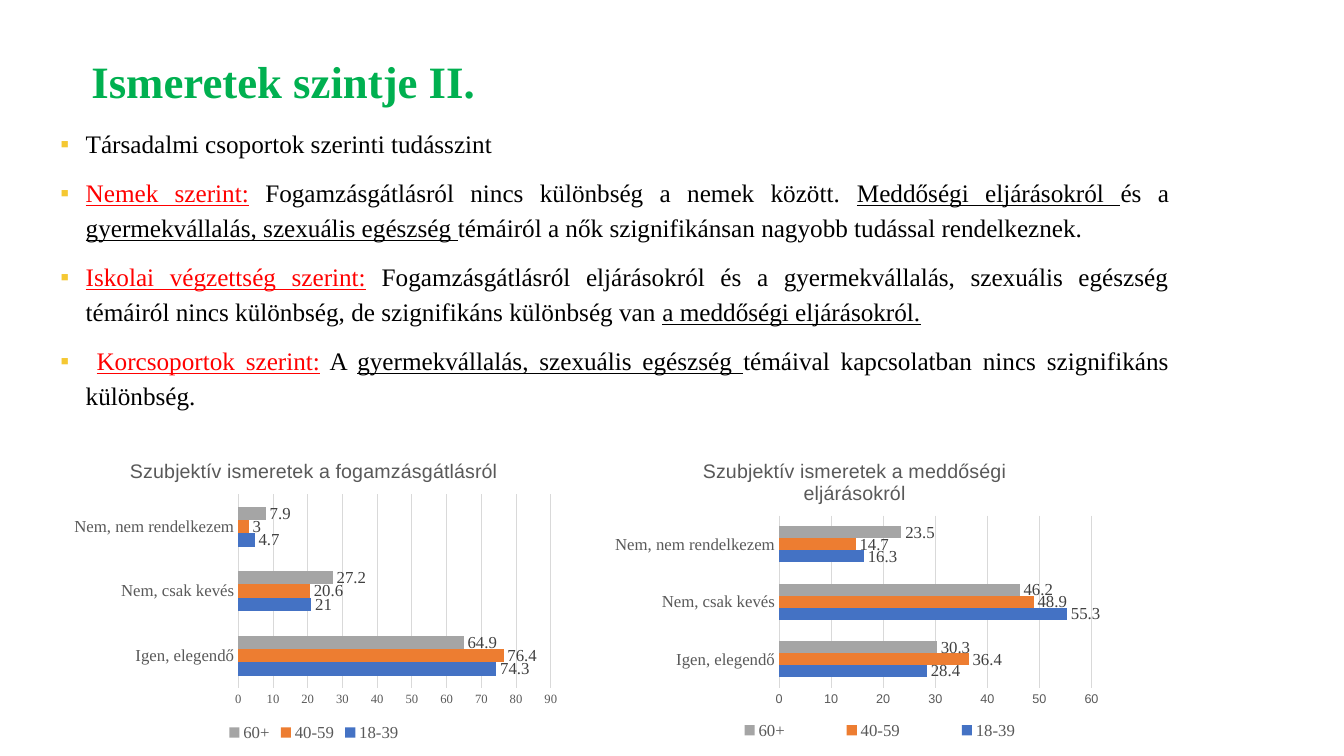
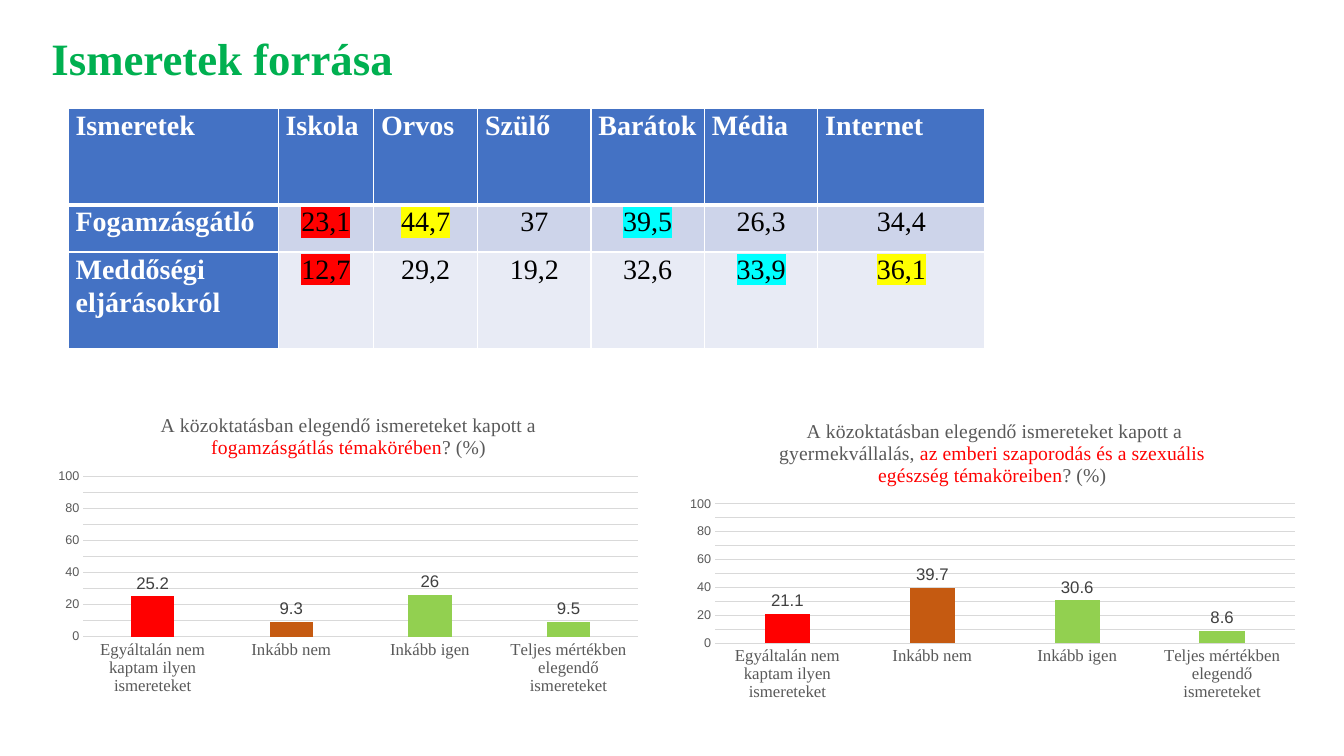
"""Build two slides on knowledge levels and knowledge sources."""
from copy import deepcopy
from dataclasses import dataclass
from typing import NamedTuple, Optional

from pptx import Presentation
from pptx import util as u
from pptx.chart import data as chart_data
from pptx.dml.color import RGBColor
from pptx.enum import chart as chart_enum, text
from pptx.oxml import ns, xmlchemy

EMU_PER_PX = 9525


@dataclass(frozen=True)
class Theme:
    serif: str = "Times New Roman"
    sans: str = "Arial"
    title: str = "00B050"
    body: str = "000000"
    accent: str = "FF0000"
    bullet: str = "F5C832"
    white: str = "FFFFFF"
    header: str = "4472C4"
    bands: tuple = ("CDD4EA", "E8EBF5")
    grid: str = "D9D9D9"
    chart_text: str = "595959"
    label: str = "404040"
    ages: tuple = ("4472C4", "ED7D31", "A5A5A5")
    answers: tuple = ("FF0000", "C55A11", "92D050", "92D050")
    title_size: int = 32
    table_size: int = 20
    body_size: int = 18
    chart_title_size: int = 14
    chart_size: int = 12
    axis_size: int = 9


THEME = Theme()


class Run(NamedTuple):
    text: str
    color: Optional[str] = None
    underline: bool = False
    highlight: Optional[str] = None


class ChartStyle(NamedTuple):
    kind: int
    gap: int
    overlap: int
    maximum: int
    major: int
    axis_font: str
    label_font: str
    title_font: str


def px(length):
    return u.Emu(length * EMU_PER_PX)


def rgb(color):
    return RGBColor.from_string(color)


def add_xml(parent, tag, index=None, **attributes):
    element = xmlchemy.OxmlElement(tag)
    for name, value in attributes.items():
        element.set(name, str(value))
    parent.insert(len(parent) if index is None else index, element)
    return element


def set_font(font, name, size, color, bold=False):
    font.name, font.size, font.bold = name, u.Pt(size), bold
    font.color.rgb = rgb(color)


def add_runs(paragraph, runs):
    for item in runs:
        run = paragraph.add_run()
        run.text = item.text
        if item.color:
            run.font.color.rgb = rgb(item.color)
        if item.underline:
            run.font.underline = True
        if item.highlight:
            highlight = add_xml(run.font._element, "a:highlight")
            add_xml(highlight, "a:srgbClr", val=item.highlight)


def place(shape, box):
    shape.left, shape.top, shape.width, shape.height = map(px, box)
    frame = shape.text_frame
    frame.word_wrap = True
    frame.auto_size = text.MSO_AUTO_SIZE.NONE
    frame.vertical_anchor = text.MSO_ANCHOR.TOP
    return frame


def set_title(slide, wording, left, top):
    frame = place(slide.shapes.title, (left, top, 1096, 106))
    frame.margin_left = frame.margin_top = frame.margin_right = frame.margin_bottom = 0
    paragraph = frame.paragraphs[0]
    paragraph.alignment = text.PP_ALIGN.LEFT
    paragraph.line_spacing = 1.12
    set_font(paragraph.font, THEME.serif, THEME.title_size, THEME.title, True)
    add_runs(paragraph, [Run(wording)])


def set_bullets(slide, items, box):
    frame = place(slide.placeholders[1], box)
    for index, runs in enumerate(items):
        paragraph = frame.add_paragraph() if index else frame.paragraphs[0]
        paragraph.alignment = text.PP_ALIGN.JUSTIFY
        paragraph.line_spacing = 1.16
        paragraph.space_before = u.Pt(10 if index else 0)
        properties = paragraph._p.get_or_add_pPr()
        properties.set("marL", str(px(24)))
        properties.set("indent", str(px(-24)))
        add_xml(add_xml(properties, "a:buClr"), "a:srgbClr", val=THEME.bullet)
        add_xml(properties, "a:buFont", typeface=THEME.sans)
        add_xml(properties, "a:buChar", char="▪")
        set_font(paragraph.font, THEME.serif, THEME.body_size, THEME.body)
        add_runs(paragraph, runs)


def set_borders(cell, widths):
    properties = cell._tc.get_or_add_tcPr()
    for side, width in widths.items():
        line = add_xml(properties, f"a:ln{side}", w=u.Pt(width))
        add_xml(add_xml(line, "a:solidFill"), "a:srgbClr", val=THEME.white)


def fill_cell(cell, run, row, column):
    heading = row == 0 or column == 0
    set_borders(cell, {"L": 1, "R": 1, "T": 3 if row == 1 else 1, "B": 1 if row else 3})
    cell.fill.solid()
    cell.fill.fore_color.rgb = rgb(THEME.header if heading else THEME.bands[row - 1])
    cell.margin_left = cell.margin_right = px(7)
    cell.margin_top = cell.margin_bottom = 0
    paragraph = cell.text_frame.paragraphs[0]
    paragraph.alignment = text.PP_ALIGN.LEFT if heading else text.PP_ALIGN.CENTER
    paragraph.line_spacing = 1.07
    paragraph.space_after = u.Pt(8)
    color = THEME.white if heading else THEME.body
    set_font(paragraph.font, THEME.serif, THEME.table_size, color, heading)
    add_runs(paragraph, [run])


def add_table(slide, rows, left, top, widths, heights):
    table = slide.shapes.add_table(
        len(heights), len(widths), px(left), px(top), px(sum(widths)), px(sum(heights))
    ).table
    for column, width in zip(table.columns, widths):
        column.width = px(width)
    for row, height in zip(table.rows, heights):
        row.height = px(height)
    for row, runs in enumerate(rows):
        for column, run in enumerate(runs):
            fill_cell(table.cell(row, column), run, row, column)


def set_layout(element, index, fractions, inner=False):
    for old in element.findall(ns.qn("c:layout")):
        element.remove(old)
    manual = add_xml(add_xml(element, "c:layout", index), "c:manualLayout")
    if inner:
        add_xml(manual, "c:layoutTarget", val="inner")
    for axis in "xy":
        add_xml(manual, f"c:{axis}Mode", val="edge")
    for name, fraction in zip("xywh", fractions):
        add_xml(manual, f"c:{name}", val=fraction)


def draw_line(line):
    line.color.rgb = rgb(THEME.grid)
    line.width = u.Pt(0.75)


def add_minor_gridlines(axis, unit):
    axis.minor_unit = unit
    axis.has_minor_gridlines = True
    major, minor = (axis._element.find(ns.qn(f"c:{level}Gridlines")) for level in ("major", "minor"))
    minor.append(deepcopy(major.find(ns.qn("c:spPr"))))


def style_axes(chart, style):
    category, value = chart.category_axis, chart.value_axis
    for axis in (category, value):
        axis.major_tick_mark = axis.minor_tick_mark = chart_enum.XL_TICK_MARK.NONE
    set_font(category.tick_labels.font, THEME.serif, THEME.chart_size, THEME.chart_text)
    set_font(value.tick_labels.font, style.axis_font, THEME.axis_size, THEME.chart_text)
    draw_line(category.format.line)
    value.format.line.fill.background()
    value.minimum_scale, value.maximum_scale = 0, style.maximum
    value.major_unit = style.major
    value.has_major_gridlines = True
    draw_line(value.major_gridlines.format.line)
    if style.major > 10:
        add_minor_gridlines(value, 10)


def add_chart(slide, box, style, title, categories, series_values, plot_area):
    data = chart_data.CategoryChartData()
    data.categories = categories
    for name, values in series_values.items():
        data.add_series(name, values)
    chart = slide.shapes.add_chart(style.kind, *map(px, box), data).chart
    set_font(chart.font, THEME.sans, 10, THEME.body)
    chart.has_title = True
    paragraph = chart.chart_title.text_frame.paragraphs[0]
    set_font(paragraph.font, style.title_font, THEME.chart_title_size, THEME.chart_text)
    add_runs(paragraph, title)
    chart.has_legend = False
    style_axes(chart, style)
    plot = chart.plots[0]
    plot.vary_by_categories = False
    plot.gap_width, plot.overlap = style.gap, style.overlap
    for series, color in zip(plot.series, THEME.ages):
        series.format.fill.solid()
        series.format.fill.fore_color.rgb = rgb(color)
        labels = series.data_labels
        labels.show_value = True
        labels.position = chart_enum.XL_LABEL_POSITION.OUTSIDE_END
        set_font(labels.font, style.label_font, THEME.chart_size, THEME.label)
    set_layout(plot._element.getparent(), 0, plot_area, True)
    return chart


def add_age_chart(slide, left, title, values, maximum, axis_font, plot_area, legend_area=None):
    style = ChartStyle(chart_enum.XL_CHART_TYPE.BAR_CLUSTERED, 182, 0, maximum, 10,
                       axis_font, THEME.serif, THEME.sans)
    categories = ["Igen, elegendő", "Nem, csak kevés", "Nem, nem rendelkezem"]
    series_values = dict(zip(("18-39", "40-59", "60+"), values))
    chart = add_chart(slide, (left, 422, 480, 288), style, [Run(title)],
                      categories, series_values, plot_area)
    chart.has_legend = True
    legend = chart.legend
    legend.position = chart_enum.XL_LEGEND_POSITION.BOTTOM
    legend.include_in_layout = False
    set_font(legend.font, THEME.serif, THEME.chart_size, THEME.chart_text)
    if legend_area:
        set_layout(legend._element, 1, legend_area)


def add_answer_chart(slide, box, title, values, plot_area):
    style = ChartStyle(chart_enum.XL_CHART_TYPE.COLUMN_CLUSTERED, 219, -27, 100, 20,
                       THEME.sans, THEME.sans, THEME.serif)
    categories = ["Egyáltalán nem kaptam ilyen ismereteket", "Inkább nem", "Inkább igen",
                  "Teljes mértékben elegendő ismereteket"]
    chart = add_chart(slide, box, style, title, categories, {"Series 1": values}, plot_area)
    for index, color in enumerate(THEME.answers):
        fill = chart.plots[0].series[0].points[index].format.fill
        fill.solid()
        fill.fore_color.rgb = rgb(color)


def build_levels(presentation):
    slide = presentation.slides.add_slide(presentation.slide_layouts[1])
    set_title(slide, "Ismeretek szintje II.", 87, 45)
    set_bullets(slide, [
        [Run("Társadalmi csoportok szerinti tudásszint")],
        [Run("Nemek szerint:", THEME.accent, True),
         Run(" Fogamzásgátlásról nincs különbség a nemek között. "),
         Run("Meddőségi eljárásokról ", underline=True), Run("és a "),
         Run("gyermekvállalás, szexuális egészség ", underline=True),
         Run("témáiról a nők szignifikánsan nagyobb tudással rendelkeznek.")],
        [Run("Iskolai végzettség szerint:", THEME.accent, True),
         Run(" Fogamzásgátlásról eljárásokról és a gyermekvállalás, szexuális egészség "
             "témáiról nincs különbség, de szignifikáns különbség van "),
         Run("a meddőségi eljárásokról.", underline=True)],
        [Run(" "), Run("Korcsoportok szerint:", THEME.accent, True), Run(" A "),
         Run("gyermekvállalás, szexuális egészség ", underline=True),
         Run("témáival kapcsolatban nincs szignifikáns különbség.")],
    ], (48, 113, 1075, 516))
    add_age_chart(slide, 59, "Szubjektív ismeretek a fogamzásgátlásról",
                  [(74.3, 21, 4.7), (76.4, 20.6, 3), (64.9, 27.2, 7.9)],
                  90, THEME.serif, (0.35, 0.17, 0.62, 0.64))
    add_age_chart(slide, 574, "Szubjektív ismeretek a meddőségi eljárásokról",
                  [(28.4, 55.3, 16.3), (36.4, 48.9, 14.7), (30.3, 46.2, 23.5)],
                  60, THEME.sans, (0.35, 0.24, 0.62, 0.57), (0.17, 0.91, 0.76, 0.08))


def build_sources(presentation):
    slide = presentation.slides.add_slide(presentation.slide_layouts[5])
    set_title(slide, "Ismeretek forrása", 49, 23)
    red, yellow, cyan = "FF0000", "FFFF00", "00FFFF"
    headings = ("Ismeretek", "Iskola", "Orvos", "Szülő", "Barátok", "Média", "Internet")
    add_table(slide, [
        [Run(heading) for heading in headings],
        [Run("Fogamzásgátló"), Run("23,1", highlight=red), Run("44,7", highlight=yellow),
         Run("37"), Run("39,5", highlight=cyan), Run("26,3"), Run("34,4")],
        [Run("Meddőségi eljárásokról"), Run("12,7", highlight=red), Run("29,2"), Run("19,2"),
         Run("32,6"), Run("33,9", highlight=cyan), Run("36,1", highlight=yellow)],
    ], 65, 103, (200, 91, 99, 108, 108, 108, 159), (92, 45, 92))
    add_answer_chart(slide, (645, 385, 600, 288), [
        Run(" A közoktatásban elegendő ismereteket kapott a gyermekvállalás, "),
        Run("az emberi szaporodás és a szexuális egészség témaköreiben", THEME.accent),
        Run("? (%)")], (21.1, 39.7, 30.6, 8.6), (0.06, 0.33, 0.92, 0.46))
    add_answer_chart(slide, (45, 379, 574, 288), [
        Run("A közoktatásban elegendő ismereteket kapott a "),
        Run("fogamzásgátlás témakörében", THEME.accent),
        Run("? (%)")], (25.2, 9.3, 26, 9.5), (0.06, 0.26, 0.92, 0.53))


def main():
    presentation = Presentation()
    presentation.slide_width, presentation.slide_height = px(1280), px(720)
    build_levels(presentation)
    build_sources(presentation)
    presentation.save("out.pptx")


if __name__ == "__main__":
    main()
